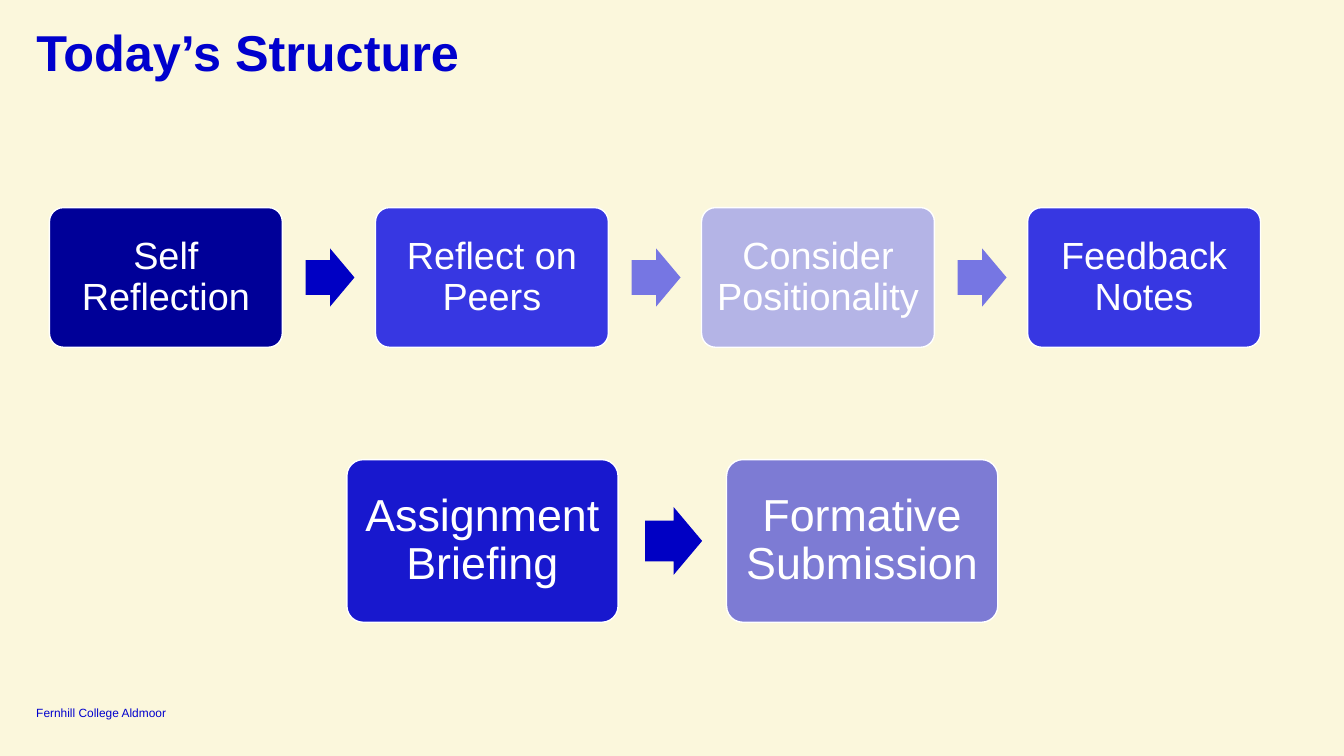
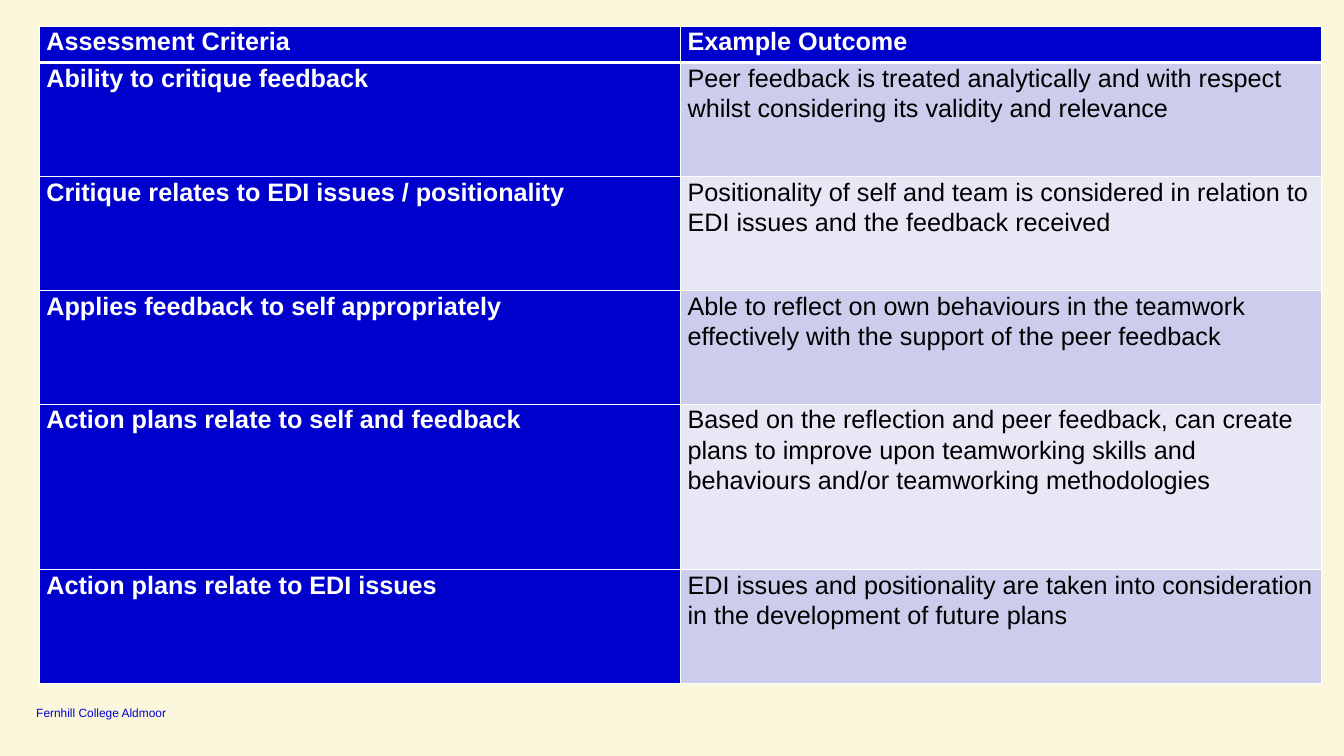
from lxml.etree import SubElement
from pptx import Presentation
from pptx.dml.color import RGBColor
from pptx.enum.shapes import MSO_SHAPE as Preset
from pptx.enum.text import MSO_ANCHOR as Anchor, PP_ALIGN as Align
from pptx.oxml.ns import qn
from pptx.util import Inches, Pt

COLORS = {
    "cream": "FBF7DC",
    "blue": "0000CD",
    "arrow": "0000C4",
    "navy": "000098",
    "bright": "3737E2",
    "mid": "7676E3",
    "pale": "B4B4E6",
    "band_dark": "CCCCED",
    "band_light": "E7E7F6",
    "white": "FFFFFF",
    "black": "000000",
}
FONT = "Arial"
MARGIN = 0.36

MAIN_STEPS = [
    ("Self Reflection", "navy", 100),
    ("Reflect on Peers", "bright", 100),
    ("Consider Positionality", "pale", 100),
    ("Feedback Notes", "bright", 100),
]
ASSIGNMENT_STEPS = [
    ("Assignment Briefing", "blue", 90),
    ("Formative Submission", "blue", 50),
]
CRITERIA = [
    ("Assessment Criteria", "Example Outcome"),
    ("Ability to critique feedback",
     "Peer feedback is treated analytically and with respect whilst "
     "considering its validity and relevance"),
    ("Critique relates to EDI issues / positionality",
     "Positionality of self and team is considered in relation to EDI issues "
     "and the feedback received"),
    ("Applies feedback to self appropriately",
     "Able to reflect on own behaviours in the teamwork effectively with the "
     "support of the peer feedback"),
    ("Action plans relate to self and feedback",
     "Based on the reflection and peer feedback, can create plans to improve "
     "upon teamworking skills and behaviours and/or teamworking methodologies"),
    ("Action plans relate to EDI issues",
     "EDI issues and positionality are taken into consideration in the "
     "development of future plans"),
]
ROW_HEIGHTS = [0.36, 1.13, 1.13, 1.13, 1.64, 1.13]


def rgb(name):
    return RGBColor.from_string(COLORS[name])


def style_paragraph(paragraph, size, color, bold=False, spacing=1.0):
    paragraph.line_spacing = spacing
    font = paragraph.font
    font.name, font.size, font.bold = FONT, Pt(size), bold
    font.color.rgb = rgb(color)


def set_margins(target, horizontal, vertical):
    target.margin_left = target.margin_right = Inches(horizontal)
    target.margin_top = target.margin_bottom = Inches(vertical)


def add_text(slide, box, text, size, anchor=Anchor.TOP, **style):
    frame = slide.shapes.add_textbox(*map(Inches, box)).text_frame
    frame.word_wrap = True
    frame.vertical_anchor = anchor
    set_margins(frame, 0, 0)
    frame.text = text
    style_paragraph(frame.paragraphs[0], size, "blue", **style)


def add_slide(presentation):
    slide = presentation.slides.add_slide(presentation.slide_layouts[6])
    add_text(slide, (MARGIN, 6.99, 1.8, 0.15), "Fernhill College Aldmoor", 8.5,
             anchor=Anchor.BOTTOM)
    return slide


def add_title(slide, text):
    add_text(slide, (MARGIN, 0.28, 12.62, 0.41), text, 36, bold=True, spacing=0.9)


def add_filled_shape(slide, preset, box, color, opacity=100):
    shape = slide.shapes.add_shape(preset, *map(Inches, box))
    shape.shadow.inherit = False
    shape.fill.solid()
    shape.fill.fore_color.rgb = rgb(color)
    if opacity < 100:
        color_element = shape._element.spPr.find(".//" + qn("a:srgbClr"))
        SubElement(color_element, qn("a:alpha"), val=str(opacity * 1000))
    shape.line.fill.background()
    return shape


def add_step(slide, box, text, size, inset, color, opacity):
    shape = add_filled_shape(slide, Preset.ROUNDED_RECTANGLE, box, color, opacity)
    shape.adjustments[0] = 0.1
    shape.line.color.rgb = rgb("white")
    shape.line.width = Pt(1)
    frame = shape.text_frame
    frame.word_wrap = True
    frame.vertical_anchor = Anchor.MIDDLE
    set_margins(frame, inset, inset)
    frame.text = text
    paragraph = frame.paragraphs[0]
    paragraph.alignment = Align.CENTER
    style_paragraph(paragraph, size, "white", spacing=0.9)


def add_arrow(slide, box, color):
    arrow = add_filled_shape(slide, Preset.RIGHT_ARROW, box, color)
    arrow.adjustments[0] = 0.6
    arrow.adjustments[1] = 0.5


def add_process(slide, left, top, width, steps, arrow_colors, size, inset):
    height, pitch = 0.6 * width, 1.4 * width
    arrow_width, arrow_height = 0.21 * width, 0.25 * width
    arrow_top = top + (height - arrow_height) / 2
    for index, (text, color, opacity) in enumerate(steps):
        add_step(slide, (left + index * pitch, top, width, height),
                 text, size, inset, color, opacity)
    for index, color in enumerate(arrow_colors):
        arrow_left = left + index * pitch + 1.1 * width
        add_arrow(slide, (arrow_left, arrow_top, arrow_width, arrow_height), color)


def set_borders(cell, top, bottom):
    properties = cell._tc.get_or_add_tcPr()
    for side, width in (("L", 1), ("R", 1), ("T", top), ("B", bottom)):
        line = SubElement(properties, qn(f"a:ln{side}"), w=str(Pt(width)))
        fill = SubElement(line, qn("a:solidFill"))
        SubElement(fill, qn("a:srgbClr"), val=COLORS["white"])


def fill_cell(cell, text, row, column):
    set_borders(cell, top=3 if row == 1 else 1, bottom=3 if row == 0 else 1)
    heading = row == 0 or column == 0
    band = "band_dark" if row % 2 else "band_light"
    cell.fill.solid()
    cell.fill.fore_color.rgb = rgb("blue" if heading else band)
    set_margins(cell, 0.07, 0)
    cell.text = text
    paragraph = cell.text_frame.paragraphs[0]
    paragraph.space_after = Pt(8)
    style_paragraph(paragraph, 18, "white" if heading else "black",
                    bold=heading, spacing=1.07)


def add_criteria_table(slide):
    box = (0.39, 0.26, 12.72, sum(ROW_HEIGHTS))
    table = slide.shapes.add_table(len(CRITERIA), 2, *map(Inches, box)).table
    for row, (texts, height) in enumerate(zip(CRITERIA, ROW_HEIGHTS)):
        table.rows[row].height = Inches(height)
        for column, text in enumerate(texts):
            fill_cell(table.cell(row, column), text, row, column)


def main():
    presentation = Presentation()
    presentation.slide_width = Inches(13.33)
    presentation.slide_height = Inches(7.5)
    background = presentation.slide_master.background.fill
    background.solid()
    background.fore_color.rgb = rgb("cream")

    structure = add_slide(presentation)
    add_title(structure, "Today’s Structure")
    add_process(structure, 0.49, 2.06, 2.31, MAIN_STEPS,
                ["arrow", "mid", "mid"], size=27, inset=0.1)
    add_process(structure, 3.44, 4.56, 2.69, ASSIGNMENT_STEPS,
                ["arrow"], size=32, inset=0.12)

    add_criteria_table(add_slide(presentation))
    presentation.save("out.pptx")


if __name__ == "__main__":
    main()
